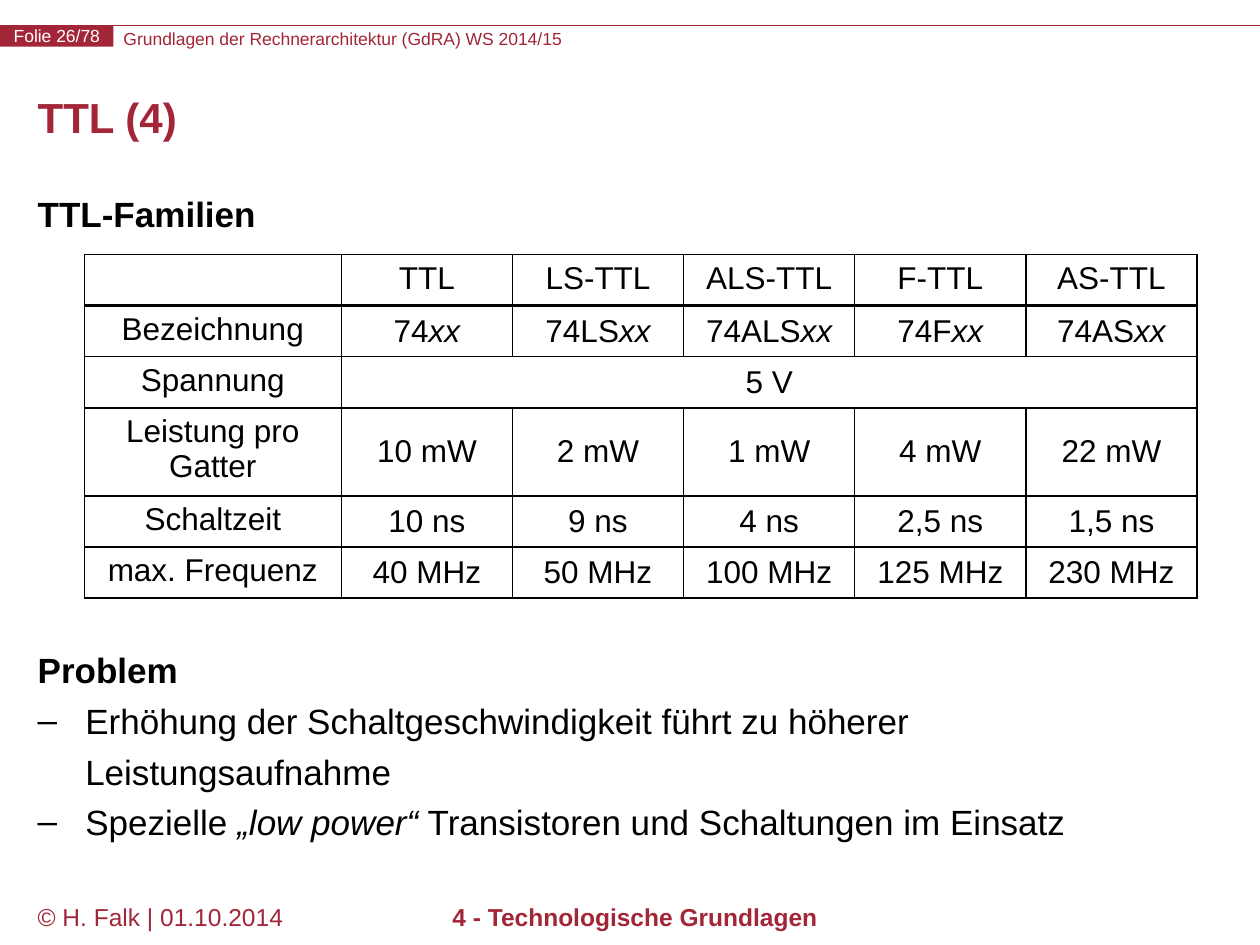
from lxml.etree import SubElement
from pptx import Presentation
from pptx.dml.color import RGBColor
from pptx.enum.shapes import MSO_CONNECTOR, MSO_SHAPE
from pptx.enum.text import MSO_ANCHOR, PP_ALIGN
from pptx.oxml.ns import qn
from pptx.util import Cm, Pt

COLORS = {"accent": "A32638", "text": "000000", "white": "FFFFFF"}
NO_INSET = {f"margin_{side}": 0 for side in ("left", "top", "right", "bottom")}


class SlideBuilder:
    def __init__(self, slide, font="Arial"):
        self.slide = slide
        self.font = font

    def color(self, name):
        return RGBColor.from_string(COLORS[name])

    def apply(self, target, values):
        for attribute, value in values.items():
            setattr(target, attribute, value)

    def add_text(self, paragraph, text, size, color="text", bold=False, **layout):
        """Fill a paragraph; parts between asterisks become italic."""
        self.apply(paragraph, layout)
        for index, part in enumerate(text.split("*")):
            if part:
                run = paragraph.add_run()
                run.text = part
                self.apply(run.font, {"name": self.font, "size": Pt(size),
                                      "bold": bold, "italic": index % 2 == 1})
                run.font.color.rgb = self.color(color)

    def textbox(self, left, top, width, height, **frame_values):
        box = self.slide.shapes.add_textbox(Cm(left), Cm(top), Cm(width), Cm(height))
        self.apply(box.text_frame, {"word_wrap": True, **frame_values})
        return box.text_frame

    def badge(self, text, left, top, width, height):
        shape = self.slide.shapes.add_shape(
            MSO_SHAPE.RECTANGLE, Cm(left), Cm(top), Cm(width), Cm(height))
        shape.shadow.inherit = False
        shape.fill.solid()
        shape.fill.fore_color.rgb = self.color("accent")
        shape.line.fill.background()
        self.apply(shape.text_frame, {"word_wrap": False,
                                      "vertical_anchor": MSO_ANCHOR.MIDDLE, **NO_INSET})
        self.add_text(shape.text_frame.paragraphs[0], text, 10, "white",
                      alignment=PP_ALIGN.CENTER)

    def rule(self, top, width):
        line = self.slide.shapes.add_connector(
            MSO_CONNECTOR.STRAIGHT, 0, Cm(top), Cm(width), Cm(top))
        line.line.color.rgb = self.color("accent")
        line.line.width = Pt(0.75)
        SubElement(line._element.spPr, qn("a:effectLst"))

    def hang(self, paragraph, bullet=None):
        """Give a paragraph a hanging indent and, if wanted, a bullet."""
        properties = paragraph._p.get_or_add_pPr()
        properties.set("marL", str(Cm(0.96)))
        properties.set("indent", str(-Cm(0.96)))
        if bullet:
            SubElement(properties, qn("a:buFont"), typeface=self.font)
            SubElement(properties, qn("a:buChar"), char=bullet)

    def borders(self, cell, **widths):
        properties = cell._tc.get_or_add_tcPr()
        for side in "LRTB":
            line = SubElement(properties, qn(f"a:ln{side}"), w=str(Pt(widths.get(side, 1))))
            fill = SubElement(line, qn("a:solidFill"))
            SubElement(fill, qn("a:srgbClr"), val=COLORS["text"])

    def table(self, rows, left, top, column_widths, row_height):
        """Draw the grid; a row with a single value spans all value columns."""
        table = self.slide.shapes.add_table(
            len(rows), len(column_widths), Cm(left), Cm(top),
            Cm(sum(column_widths)), Cm(row_height * len(rows))).table
        self.apply(table, {"first_row": False, "horz_banding": False})
        for column, width in zip(table.columns, column_widths):
            column.width = Cm(width)
        for r, values in enumerate(rows):
            table.rows[r].height = Cm(row_height)
            for c in range(len(column_widths)):
                cell = table.cell(r, c)
                self.borders(cell, T=2.25 if r == 1 else 1, B=2.25 if r == 0 else 1)
                cell.fill.solid()
                cell.fill.fore_color.rgb = self.color("white")
                cell.vertical_anchor = MSO_ANCHOR.MIDDLE if r and c else MSO_ANCHOR.TOP
                if c < len(values):
                    self.add_text(cell.text_frame.paragraphs[0], values[c], 18,
                                  alignment=PP_ALIGN.CENTER)
            if len(values) == 2:
                table.cell(r, 1).merge(table.cell(r, len(column_widths) - 1))


FAMILIES = [
    ["", "TTL", "LS-TTL", "ALS-TTL", "F-TTL", "AS-TTL"],
    ["Bezeichnung", "74*xx*", "74LS*xx*", "74ALS*xx*", "74F*xx*", "74AS*xx*"],
    ["Spannung", "5 V"],
    ["Leistung pro Gatter", "10 mW", "2 mW", "1 mW", "4 mW", "22 mW"],
    ["Schaltzeit", "10 ns", "9 ns", "4 ns", "2,5 ns", "1,5 ns"],
    ["max. Frequenz", "40 MHz", "50 MHz", "100 MHz", "125 MHz", "230 MHz"],
]
PROBLEMS = [
    "Erhöhung der Schaltgeschwindigkeit führt zu höherer Leistungsaufnahme",
    "Spezielle *„low power“* Transistoren und Schaltungen im Einsatz",
]


def main():
    deck = Presentation()
    deck.slide_width, deck.slide_height = Cm(25.4), Cm(19.05)
    builder = SlideBuilder(deck.slides.add_slide(deck.slide_layouts[6]))

    builder.rule(0.51, 25.4)
    course = builder.textbox(2.49, 0.56, 16.76, 0.43, **NO_INSET)
    builder.add_text(course.paragraphs[0],
                     "Grundlagen der Rechnerarchitektur (GdRA) WS 2014/15", 10, "accent")
    builder.badge("Folie 26/78", 0, 0.51, 2.29, 0.43)

    author = builder.textbox(0.51, 18.06, 5.59, 0.99)
    builder.add_text(author.paragraphs[0], "© H. Falk | 01.10.2014", 14, "accent")
    chapter = builder.textbox(5.11, 18.06, 15.39, 0.99)
    builder.add_text(chapter.paragraphs[0], "4 - Technologische Grundlagen", 14, "accent",
                     bold=True, alignment=PP_ALIGN.CENTER)

    title = builder.textbox(0.51, 1.52, 24.41, 1.83, vertical_anchor=MSO_ANCHOR.MIDDLE)
    builder.add_text(title.paragraphs[0], "TTL (4)", 24, "accent", bold=True,
                     line_spacing=Pt(24))

    body = builder.textbox(0.51, 3.86, 24.41, 13.87)
    for heading, paragraph, gap in (("TTL-Familien", body.paragraphs[0], 0),
                                    ("Problem", body.add_paragraph(), 239)):
        builder.add_text(paragraph, heading, 20, bold=True, line_spacing=0.9,
                         space_before=Pt(gap))
        builder.hang(paragraph)
    for problem in PROBLEMS:
        paragraph = body.add_paragraph()
        builder.add_text(paragraph, problem, 20, line_spacing=Pt(28.8))
        builder.hang(paragraph, "–")

    builder.table(FAMILIES, 1.7, 5.13, [5.18] + [3.45] * 5, 1.03)
    deck.save("out.pptx")


if __name__ == "__main__":
    main()
